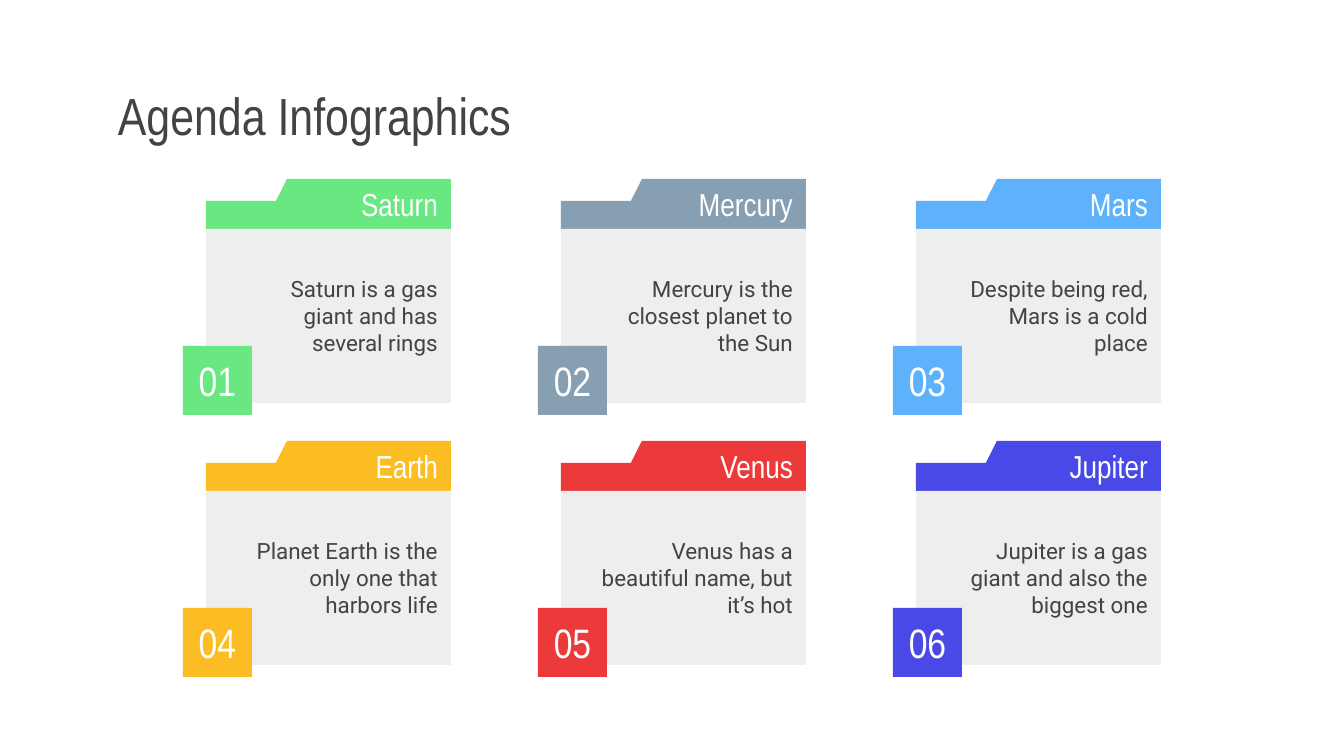
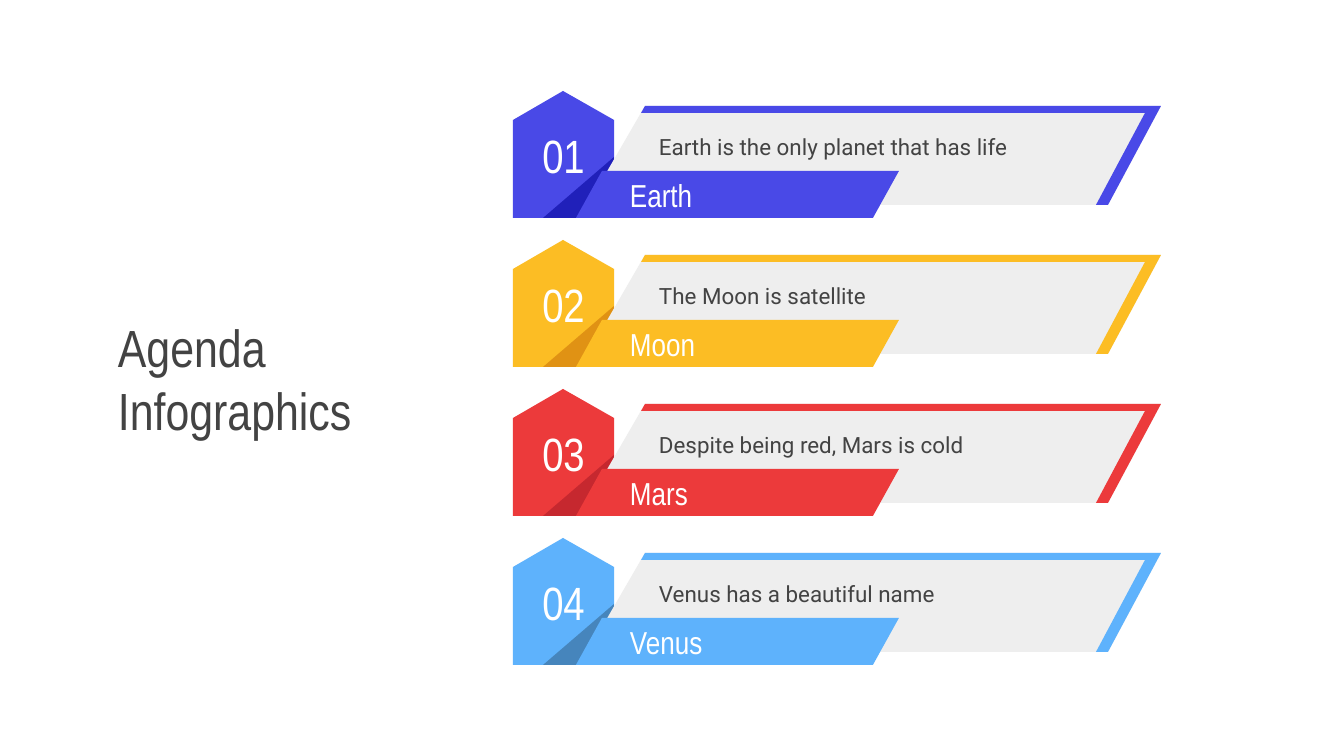
from dataclasses import dataclass

from pptx import Presentation
from pptx.dml.color import RGBColor
from pptx.enum.shapes import MSO_SHAPE
from pptx.enum.text import MSO_ANCHOR, PP_ALIGN
from pptx.util import Emu, Pt

PX = 914400 / 134.4


@dataclass(frozen=True)
class Theme:
    green: str = "69E781"
    gray: str = "869FB2"
    sky: str = "5EB2FC"
    yellow: str = "FCBD24"
    red: str = "EC3A3B"
    indigo: str = "4949E7"
    dark_indigo: str = "2020BA"
    dark_yellow: str = "E09214"
    dark_red: str = "C6282F"
    dark_sky: str = "4685BC"
    panel: str = "EEEEEE"
    ink: str = "434343"
    white: str = "FFFFFF"
    heading_font: str = "Arial Narrow"
    body_font: str = "Roboto"
    title_size: int = 28
    hexagon_size: int = 25
    badge_size: int = 22
    label_size: int = 17
    body_size: int = 12


theme = Theme()


def write_text(shape, text, *, size, color=theme.white, font=theme.heading_font,
               align=PP_ALIGN.LEFT, anchor=MSO_ANCHOR.MIDDLE, inset_left=13, inset_top=13):
    frame = shape.text_frame
    frame.word_wrap = True
    frame.vertical_anchor = anchor
    frame.margin_left = Emu(round(inset_left * PX))
    frame.margin_top = Emu(round(inset_top * PX))
    frame.margin_right = frame.margin_bottom = Emu(round(13 * PX))
    paragraph = frame.paragraphs[0]
    paragraph.alignment = align
    run = paragraph.add_run()
    run.text = text
    run.font.name = font
    run.font.size = Pt(size)
    run.font.color.rgb = RGBColor.from_string(color)


def add_block(slide, color, corners, left=0, top=0):
    points = [(left + x, top + y) for x, y in corners]
    if len(points) == 2:
        (x1, y1), (x2, y2) = points
        box = [Emu(round(value * PX)) for value in (x1, y1, x2 - x1, y2 - y1)]
        shape = slide.shapes.add_shape(MSO_SHAPE.RECTANGLE, *box)
    else:
        builder = slide.shapes.build_freeform(*points[0], scale=PX)
        builder.add_line_segments(points[1:], close=True)
        shape = builder.convert_to_shape()
    shape.shadow.inherit = False
    shape.fill.solid()
    shape.fill.fore_color.rgb = RGBColor.from_string(color)
    shape.line.fill.background()
    return shape


presentation = Presentation()
presentation.slide_width = Emu(round(1344 * PX))
presentation.slide_height = Emu(round(756 * PX))

slides = []
for title_box in [(105, 79, 1135, 72), (105, 316, 292, 124)]:
    slide = presentation.slides.add_slide(presentation.slide_layouts[6])
    title = slide.shapes.add_textbox(*[Emu(round(value * PX)) for value in title_box])
    write_text(title, "Agenda Infographics", size=theme.title_size, color=theme.ink)
    slides.append(slide)
folder_slide, ribbon_slide = slides

folders = [
    ("Saturn", "Saturn is a gas giant and has several rings", theme.green),
    ("Mercury", "Mercury is the closest planet to the Sun", theme.gray),
    ("Mars", "Despite being red, Mars is a cold place", theme.sky),
    ("Earth", "Planet Earth is the only one that harbors life", theme.yellow),
    ("Venus", "Venus has a beautiful name, but it’s hot", theme.red),
    ("Jupiter", "Jupiter is a gas giant and also the biggest one", theme.indigo),
]
folder_tab = [(81, 0), (70, 22), (0, 22), (0, 50), (245, 50), (245, 0)]
folder_body = [(0, 50), (245, 224)]
folder_badge = [(-23, 167), (46, 236)]

for index, (planet, description, color) in enumerate(folders):
    row, column = divmod(index, 3)
    left, top = 206 + 355 * column, 179 + 262 * row
    tab = add_block(folder_slide, color, folder_tab, left, top)
    write_text(tab, planet, size=theme.label_size, align=PP_ALIGN.RIGHT)
    body = add_block(folder_slide, theme.panel, folder_body, left, top)
    write_text(body, description, size=theme.body_size, color=theme.ink,
               font=theme.body_font, align=PP_ALIGN.RIGHT, inset_left=40)
    badge = add_block(folder_slide, color, folder_badge, left, top)
    write_text(badge, f"{index + 1:02}", size=theme.badge_size, align=PP_ALIGN.CENTER)

ribbons = [
    ("Earth", "Earth is the only planet that has life", theme.indigo, theme.dark_indigo),
    ("Moon", "The Moon is satellite", theme.yellow, theme.dark_yellow),
    ("Mars", "Despite being red, Mars is cold", theme.red, theme.dark_red),
    ("Venus", "Venus has a beautiful name", theme.sky, theme.dark_sky),
]
hexagon_corners = [(50, 0), (0, 29), (0, 127), (101, 127), (101, 29)]
fold_corners = [(101, 66), (30, 127), (101, 127)]
panel_corners = [(132, 15), (92, 84), (101, 114), (595, 114), (648, 15)]
edge_corners = [(132, 15), (128, 22), (632, 22), (583, 114), (595, 114), (648, 15)]
label_corners = [(89, 80), (63, 127), (360, 127), (386, 80)]

for index, (name, description, color, dark_color) in enumerate(ribbons):
    left, top = 513, 91 + 149 * index
    hexagon = add_block(ribbon_slide, color, hexagon_corners, left, top)
    write_text(hexagon, f"{index + 1:02}", size=theme.hexagon_size, align=PP_ALIGN.CENTER)
    add_block(ribbon_slide, dark_color, fold_corners, left, top)
    panel = add_block(ribbon_slide, theme.panel, panel_corners, left, top)
    write_text(panel, description, size=theme.body_size, color=theme.ink,
               font=theme.body_font, anchor=MSO_ANCHOR.TOP, inset_left=54, inset_top=27)
    add_block(ribbon_slide, color, edge_corners, left, top)
    label = add_block(ribbon_slide, color, label_corners, left, top)
    write_text(label, name, size=theme.label_size, inset_left=54)

presentation.save("out.pptx")
